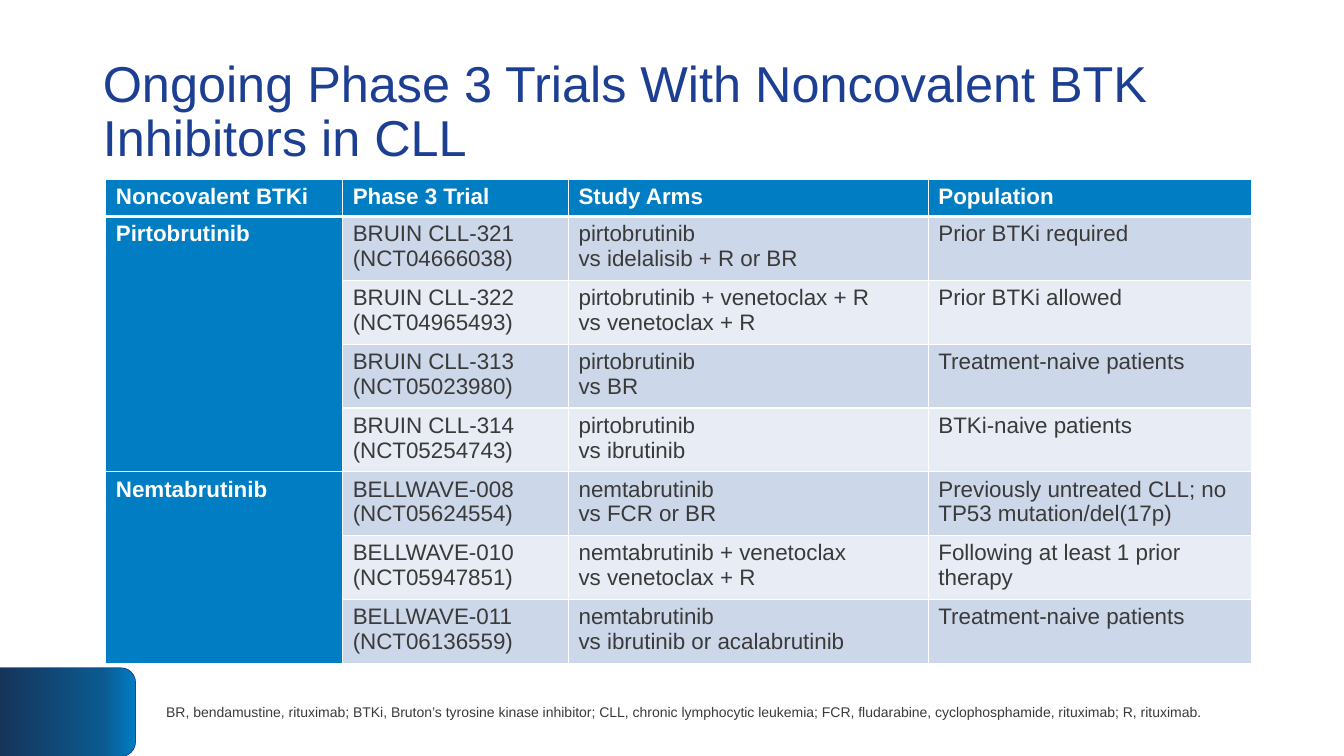
from copy import deepcopy
from dataclasses import dataclass

from lxml.etree import SubElement
from pptx import Presentation
from pptx.dml.color import RGBColor
from pptx.enum.shapes import MSO_SHAPE as Preset
from pptx.enum.text import MSO_ANCHOR as Anchor, MSO_AUTO_SIZE as AutoSize
from pptx.oxml.ns import qn
from pptx.util import Inches, Pt

COLORS = {
    "title": "1C3F93",
    "accent": "007DC3",
    "accent_mid": "0B598F",
    "accent_dark": "15345A",
    "body": "3A3A3A",
    "band_dark": "CCD7E9",
    "band_light": "E7ECF5",
    "white": "FFFFFF",
}
FONT = "Arial"
SLIDE_COLUMNS, SLIDE_ROWS = 133.33, 75
GRID_UNIT = Inches(0.1)
HEADERS = ("Noncovalent BTKi", "Phase 3 Trial", "Study Arms", "Population")
COLUMN_SPANS = (23.5, 22.4, 35.7, 32.1)
HEADER_SPAN, TRIAL_SPAN = 3.5, 5.9


@dataclass(frozen=True)
class Area:
    column: float
    row: float
    columns: float
    rows: float

    def emu(self) -> tuple[int, ...]:
        return tuple(grid(n) for n in (self.column, self.row, self.columns, self.rows))


@dataclass(frozen=True)
class Trial:
    name: str
    arms: str
    population: str


@dataclass(frozen=True)
class Drug:
    name: str
    trials: tuple[Trial, ...]


DRUGS = (
    Drug("Pirtobrutinib", (
        Trial("BRUIN CLL-321 (NCT04666038)", "pirtobrutinib\nvs idelalisib + R or BR",
              "Prior BTKi required"),
        Trial("BRUIN CLL-322 (NCT04965493)", "pirtobrutinib + venetoclax + R\nvs venetoclax + R",
              "Prior BTKi allowed"),
        Trial("BRUIN CLL-313 (NCT05023980)", "pirtobrutinib\nvs BR",
              "Treatment-naive patients"),
        Trial("BRUIN CLL-314 (NCT05254743)", "pirtobrutinib\nvs ibrutinib",
              "BTKi-naive patients"),
    )),
    Drug("Nemtabrutinib", (
        Trial("BELLWAVE-008 (NCT05624554)", "nemtabrutinib\nvs FCR or BR",
              "Previously untreated CLL; no TP53 mutation/del(17p)"),
        Trial("BELLWAVE-010\n(NCT05947851)", "nemtabrutinib + venetoclax\nvs venetoclax + R",
              "Following at least 1 prior therapy"),
        Trial("BELLWAVE-011\n(NCT06136559)", "nemtabrutinib\nvs ibrutinib or acalabrutinib",
              "Treatment-naive patients"),
    )),
)


def grid(units: float) -> int:
    return round(units * GRID_UNIT)


def rgb(name: str) -> RGBColor:
    return RGBColor.from_string(COLORS[name])


def write(frame, text: str, size: float, color: str, bold: bool = False) -> None:
    frame.text = text
    frame.word_wrap = True
    for paragraph in frame.paragraphs:
        for run in paragraph.runs:
            run.font.name = FONT
            run.font.size = Pt(size)
            run.font.bold = bold
            run.font.color.rgb = rgb(color)


def place(shape, area: Area) -> None:
    shape.left, shape.top, shape.width, shape.height = area.emu()


def add_title(slide) -> None:
    title = slide.shapes.title
    place(title, Area(9.2, 4, 115, 14.5))
    write(title.text_frame,
          "Ongoing Phase 3 Trials With Noncovalent BTK Inhibitors in CLL", 36, "title")
    title.text_frame.auto_size = AutoSize.NONE
    title.text_frame.vertical_anchor = Anchor.MIDDLE
    heading = title.text_frame.paragraphs[0]
    heading.alignment = 1
    heading.line_spacing = 0.9


def add_corner_tab(slide) -> None:
    tab = slide.shapes.add_shape(Preset.ROUND_2_SAME_RECTANGLE, *Area(2.3, 63.9, 8.8, 13.5).emu())
    tab.rotation = 90
    tab.shadow.inherit = False
    tab.line.color.rgb = rgb("title")
    tab.line.width = Pt(0.5)
    tab.fill.gradient()
    tab.fill.gradient_angle = 270
    stop_list = tab._element.spPr.find(qn("a:gradFill")).find(qn("a:gsLst"))
    stop_list.insert(1, deepcopy(stop_list[0]))
    blend = ((0, "accent"), (0.25, "accent_mid"), (1, "accent_dark"))
    for stop, (position, color) in zip(tab.fill.gradient_stops, blend):
        stop.position = position
        stop.color.rgb = rgb(color)


def add_abbreviations(slide) -> None:
    abbreviations = slide.shapes.add_textbox(*Area(15.5, 66.2, 116.5, 8.8).emu())
    write(abbreviations.text_frame,
          "BR, bendamustine, rituximab; BTKi, Bruton’s tyrosine kinase inhibitor; "
          "CLL, chronic lymphocytic leukemia; FCR, fludarabine, cyclophosphamide, "
          "rituximab; R, rituximab.", 10, "body")
    abbreviations.text_frame.vertical_anchor = Anchor.MIDDLE


def style_cell(cell, fill: str, top: float = 1, bottom: float = 1) -> None:
    properties = cell._tc.get_or_add_tcPr()
    for side, width in (("L", 1), ("R", 1), ("T", top), ("B", bottom)):
        border = SubElement(properties, qn(f"a:ln{side}"), w=str(Pt(width)))
        paint = SubElement(border, qn("a:solidFill"))
        SubElement(paint, qn("a:srgbClr"), val=COLORS["white"])
    cell.fill.solid()
    cell.fill.fore_color.rgb = rgb(fill)


def add_trial_table(slide) -> None:
    trial_count = sum(len(drug.trials) for drug in DRUGS)
    area = Area(10.5, 17.8, sum(COLUMN_SPANS), HEADER_SPAN + trial_count * TRIAL_SPAN)
    table = slide.shapes.add_table(trial_count + 1, len(HEADERS), *area.emu()).table
    for column, span in zip(table.columns, COLUMN_SPANS):
        column.width = grid(span)
    for index, row in enumerate(table.rows):
        row.height = grid(TRIAL_SPAN if index else HEADER_SPAN)
    for column, header in enumerate(HEADERS):
        cell = table.cell(0, column)
        style_cell(cell, "accent", bottom=3)
        write(cell.text_frame, header, 16, "white", True)
    row = 1
    for drug in DRUGS:
        drug_cell = table.cell(row, 0)
        drug_cell.merge(table.cell(row + len(drug.trials) - 1, 0))
        write(drug_cell.text_frame, drug.name, 16, "white", True)
        for trial in drug.trials:
            top = 3 if row == 1 else 1
            band = "band_dark" if row % 2 else "band_light"
            style_cell(table.cell(row, 0), "accent", top)
            for column, text in enumerate((trial.name, trial.arms, trial.population), 1):
                cell = table.cell(row, column)
                style_cell(cell, band, top)
                write(cell.text_frame, text, 16, "body")
            row += 1


def main() -> None:
    deck = Presentation()
    deck.slide_width, deck.slide_height = grid(SLIDE_COLUMNS), grid(SLIDE_ROWS)
    slide = deck.slides.add_slide(deck.slide_layouts[5])
    add_corner_tab(slide)
    add_title(slide)
    add_abbreviations(slide)
    add_trial_table(slide)
    deck.save("out.pptx")


if __name__ == "__main__":
    main()
